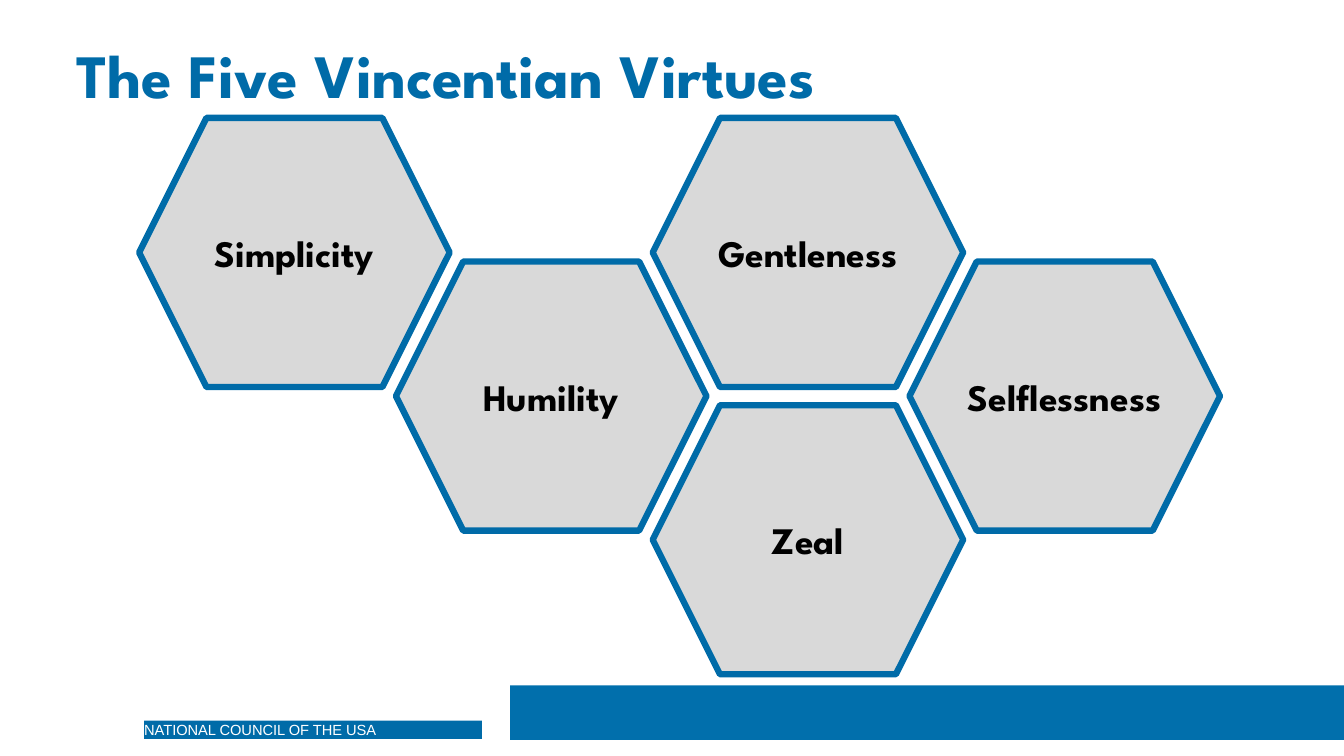
from dataclasses import dataclass

from pptx import Presentation
from pptx import util as u
from pptx.dml.color import RGBColor
from pptx.enum import shapes, text


@dataclass(frozen=True)
class Theme:
    blue: RGBColor = RGBColor.from_string("006BA8")
    band_blue: RGBColor = RGBColor.from_string("016FAC")
    grey: RGBColor = RGBColor.from_string("D9D9D9")
    white: RGBColor = RGBColor.from_string("FFFFFF")
    black: RGBColor = RGBColor.from_string("000000")
    display_font: str = "League Spartan"
    footer_font: str = "Arial"
    title_size: float = 44
    virtue_size: float = 26.7
    footer_size: float = 10.5
    outline: float = 4.5


THEME = Theme()
VIRTUES = [
    ("Simplicity", 0, 0),
    ("Humility", 1, 1),
    ("Gentleness", 2, 0),
    ("Selflessness", 3, 1),
    ("Zeal", 2, 2),
]


def apply(target, values):
    for key, value in values.items():
        setattr(target, key, value)


def write(frame, words, frame_format, paragraph_format, font_format, color):
    apply(frame, frame_format)
    paragraph = frame.paragraphs[0]
    apply(paragraph, paragraph_format)
    run = paragraph.add_run()
    run.text = words
    apply(run.font, font_format)
    run.font.color.rgb = color


def add_filled(slide, kind, box, fill, outline=None):
    shape = slide.shapes.add_shape(kind, *map(u.Inches, box))
    shape.shadow.inherit = False
    shape.fill.solid()
    shape.fill.fore_color.rgb = fill
    if outline is None:
        shape.line.fill.background()
    else:
        shape.line.color.rgb = outline
        shape.line.width = u.Pt(THEME.outline)
    return shape


def add_footer(slide, box):
    left, top, width, height = box
    rectangle = shapes.MSO_SHAPE.RECTANGLE
    add_filled(slide, rectangle, (left + 3.63, top, width - 3.63, height), THEME.band_blue)
    council = add_filled(slide, rectangle, (left, top + 0.35, 3.35, 0.18), THEME.blue)
    write(
        council.text_frame,
        "NATIONAL COUNCIL OF THE USA",
        {
            "margin_left": 0, "margin_top": 0, "margin_right": 0, "margin_bottom": 0,
            "word_wrap": True,
            "vertical_anchor": text.MSO_ANCHOR.TOP,
            "auto_size": text.MSO_AUTO_SIZE.SHAPE_TO_FIT_TEXT,
        },
        {"alignment": text.PP_ALIGN.LEFT},
        {"name": THEME.footer_font, "size": u.Pt(THEME.footer_size)},
        THEME.white,
    )


def add_title(slide, box):
    title = slide.shapes.add_textbox(*map(u.Inches, box))
    write(
        title.text_frame,
        "The Five Vincentian Virtues",
        {"word_wrap": True, "vertical_anchor": text.MSO_ANCHOR.MIDDLE},
        {"line_spacing": 0.9},
        {"name": THEME.display_font, "size": u.Pt(THEME.title_size), "bold": True},
        THEME.blue,
    )


def add_honeycomb(slide, box):
    left, top, width, height = box
    cell_width, cell_height = 3.08, 2.67
    column_step = (width - cell_width) / 3
    row_step = (height - cell_height) / 2
    for virtue, column, row in VIRTUES:
        cell = add_filled(
            slide,
            shapes.MSO_SHAPE.HEXAGON,
            (left + column * column_step, top + row * row_step, cell_width, cell_height),
            THEME.grey,
            THEME.blue,
        )
        write(
            cell.text_frame,
            virtue,
            {
                "margin_left": 0, "margin_right": 0,
                "margin_top": u.Inches(0.05), "margin_bottom": u.Inches(0.05),
                "word_wrap": True,
                "vertical_anchor": text.MSO_ANCHOR.MIDDLE,
            },
            {"alignment": text.PP_ALIGN.CENTER},
            {"name": THEME.display_font, "size": u.Pt(THEME.virtue_size), "bold": True},
            THEME.black,
        )


def main():
    deck = Presentation()
    apply(deck, {"slide_width": u.Inches(13.33), "slide_height": u.Inches(7.5)})
    slide = deck.slides.add_slide(deck.slide_layouts[6])
    add_footer(slide, (1.43, 6.8, 11.9, 0.54))
    add_title(slide, (0.66, 0.35, 10.67, 0.85))
    add_honeycomb(slide, (1.38, 1.17, 10.72, 5.52))
    deck.save("out.pptx")


if __name__ == "__main__":
    main()
